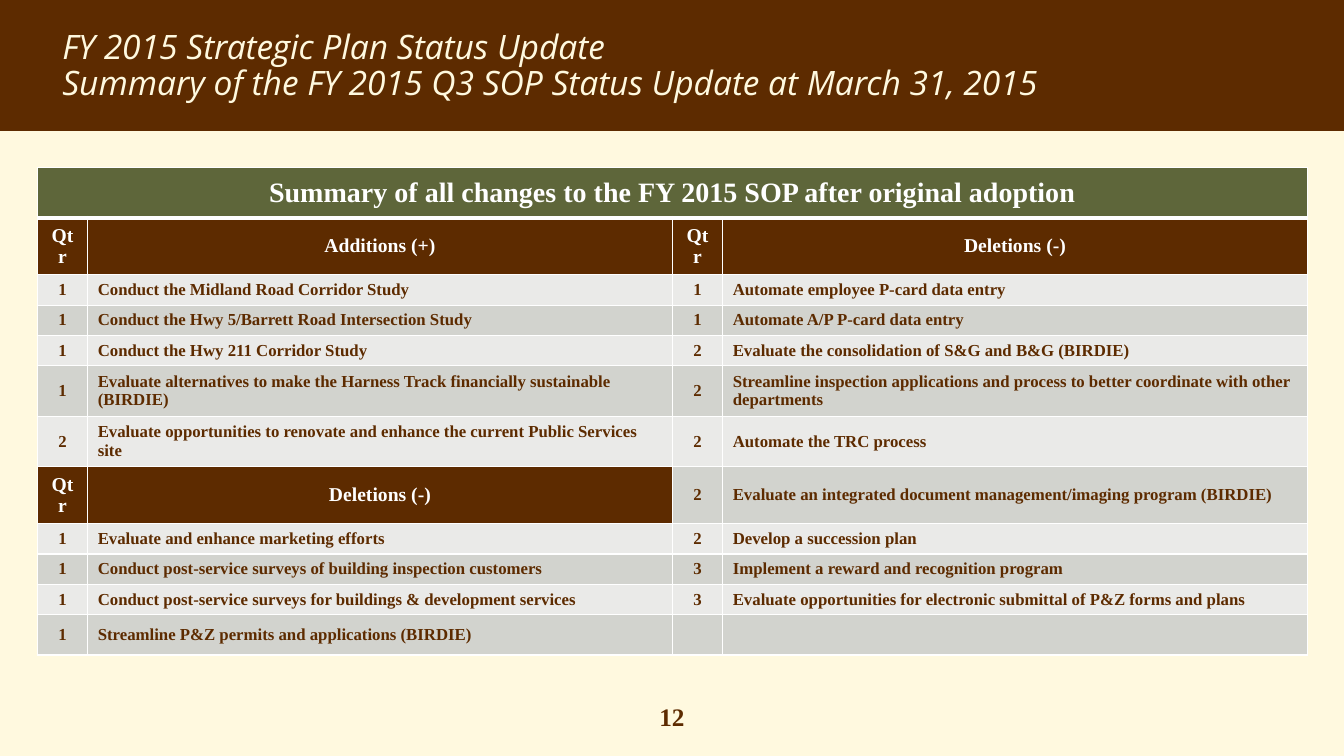
from dataclasses import dataclass

from lxml import etree
from pptx import Presentation
from pptx.dml.color import RGBColor
from pptx.enum import shapes, text
from pptx.oxml import ns
from pptx.util import Pt


@dataclass(frozen=True)
class Theme:
    """Colours, fonts and type sizes of the slide."""
    cream: str = "FFF9DF"
    brown: str = "5D2B00"
    olive: str = "5E663A"
    white: str = "FFFFFF"
    bands: tuple = ("EAEAE8", "D2D3CE")
    title_font: str = "Open Sans"
    body_font: str = "Times New Roman"
    title_size: int = 24
    caption_size: int = 20
    number_size: int = 18
    heading_size: int = 14
    item_size: int = 12


THEME = Theme()
TITLE = ("FY 2015 Strategic Plan Status Update",
         "Summary of the FY 2015 Q3 SOP Status Update at March 31, 2015")
CAPTION = "Summary of all changes to the FY 2015 SOP after original adoption"
CHANGES = [
    ("Qtr", "Additions (+)", "Qtr", "Deletions (-)"),
    ("1", "Conduct the Midland Road Corridor Study",
     "1", "Automate employee P-card data entry"),
    ("1", "Conduct the Hwy 5/Barrett Road Intersection Study",
     "1", "Automate A/P P-card data entry"),
    ("1", "Conduct the Hwy 211 Corridor Study",
     "2", "Evaluate the consolidation of S&G and B&G (BIRDIE)"),
    ("1", "Evaluate alternatives to make the Harness Track financially sustainable (BIRDIE)",
     "2", "Streamline inspection applications and process to better coordinate with other departments"),
    ("2", "Evaluate opportunities to renovate and enhance the current Public Services site",
     "2", "Automate the TRC process"),
    ("Qtr", "Deletions (-)",
     "2", "Evaluate an integrated document management/imaging program (BIRDIE)"),
    ("1", "Evaluate and enhance marketing efforts",
     "2", "Develop a succession plan"),
    ("1", "Conduct post-service surveys of building inspection customers",
     "3", "Implement a reward and recognition program"),
    ("1", "Conduct post-service surveys for buildings & development services",
     "3", "Evaluate opportunities for electronic submittal of P&Z forms and plans"),
    ("1", "Streamline P&Z permits and applications (BIRDIE)", "", ""),
]


def set_font(paragraph, name, size, color, bold=False, italic=False):
    """Set the font of a whole paragraph."""
    font = paragraph.font
    font.name, font.size = name, Pt(size)
    font.bold, font.italic = bold, italic
    font.color.rgb = RGBColor.from_string(color)


def add_text_box(slide, left, top, width, height):
    """Add a wrapping text box and return its text frame."""
    frame = slide.shapes.add_textbox(Pt(left), Pt(top), Pt(width), Pt(height)).text_frame
    frame.word_wrap = True
    frame.auto_size = text.MSO_AUTO_SIZE.SHAPE_TO_FIT_TEXT
    return frame


def add_title_band(slide, left, top, width, height):
    """Draw the title band with its lines of text."""
    band = slide.shapes.add_shape(shapes.MSO_SHAPE.RECTANGLE,
                                  Pt(left), Pt(top), Pt(width), Pt(height))
    band.shadow.inherit = False
    band.fill.solid()
    band.fill.fore_color.rgb = RGBColor.from_string(THEME.brown)
    band.line.fill.background()
    frame = add_text_box(slide, left + 37.44, top + 18, width - 82.3, height - 28)
    for index, line in enumerate(TITLE):
        paragraph = frame.add_paragraph() if index else frame.paragraphs[0]
        paragraph.text = line
        paragraph.line_spacing = 0.9
        set_font(paragraph, THEME.title_font, THEME.title_size, THEME.cream, italic=True)


def set_borders(cell, top=1, bottom=1):
    """Give a cell white borders of the given widths in points."""
    properties = cell._tc.get_or_add_tcPr()
    widths = {"lnL": 1, "lnR": 1, "lnT": top, "lnB": bottom}
    for index, (tag, width) in enumerate(widths.items()):
        line = etree.Element(ns.qn("a:" + tag), w=str(Pt(width)))
        fill = etree.SubElement(line, ns.qn("a:solidFill"))
        etree.SubElement(fill, ns.qn("a:srgbClr"), val=THEME.white)
        properties.insert(index, line)


def fill_cell(cell, words, fill, size, color, centered):
    """Colour a cell and write its words, if any."""
    cell.fill.solid()
    cell.fill.fore_color.rgb = RGBColor.from_string(fill)
    cell.vertical_anchor = text.MSO_ANCHOR.MIDDLE
    if words:
        paragraph = cell.text_frame.paragraphs[0]
        paragraph.text = words
        paragraph.alignment = text.PP_ALIGN.CENTER if centered else text.PP_ALIGN.LEFT
        set_font(paragraph, THEME.body_font, size, color, bold=True)


def add_changes_table(slide, left, top, width, height):
    """Draw the table of additions and deletions."""
    table = slide.shapes.add_table(len(CHANGES) + 1, 4, Pt(left), Pt(top),
                                   Pt(width), Pt(height)).table
    table.first_row = table.horz_banding = False
    quarter_width = 36
    for index, column in enumerate(table.columns):
        column.width = Pt(width / 2 - quarter_width if index % 2 else quarter_width)
    for index, row in enumerate(table.rows):
        row.height = Pt({0: 36, 5: 29.5}.get(index, 21.6))
    table.cell(0, 0).merge(table.cell(0, 3))
    for cell in table.rows[0].cells:
        set_borders(cell, bottom=3)
    fill_cell(table.cell(0, 0), CAPTION, THEME.olive, THEME.caption_size, THEME.white, True)
    for row, entries in enumerate(CHANGES, start=1):
        for column, words in enumerate(entries):
            cell = table.cell(row, column)
            set_borders(cell, top=3 if row == 1 else 1)
            if entries[column - column % 2] == "Qtr":
                fill_cell(cell, words, THEME.brown, THEME.heading_size, THEME.white, True)
            else:
                fill_cell(cell, words, THEME.bands[row % 2], THEME.item_size,
                          THEME.brown, column % 2 == 0)


def add_page_number(slide, left, top, width, height):
    """Write the page number centred in its box."""
    paragraph = add_text_box(slide, left, top, width, height).paragraphs[0]
    paragraph.text = "12"
    paragraph.alignment = text.PP_ALIGN.CENTER
    set_font(paragraph, THEME.body_font, THEME.number_size, THEME.brown, bold=True)


def main():
    """Build and save the slide."""
    presentation = Presentation()
    presentation.slide_width, presentation.slide_height = Pt(960), Pt(540)
    slide = presentation.slides.add_slide(presentation.slide_layouts[6])
    slide.background.fill.solid()
    slide.background.fill.fore_color.rgb = RGBColor.from_string(THEME.cream)
    add_title_band(slide, 0, 0, 960, 93.6)
    add_page_number(slide, 444, 497.5, 72, 28.8)
    add_changes_table(slide, 26.64, 119.5, 907.2, 281.5)
    presentation.save("out.pptx")


if __name__ == "__main__":
    main()
